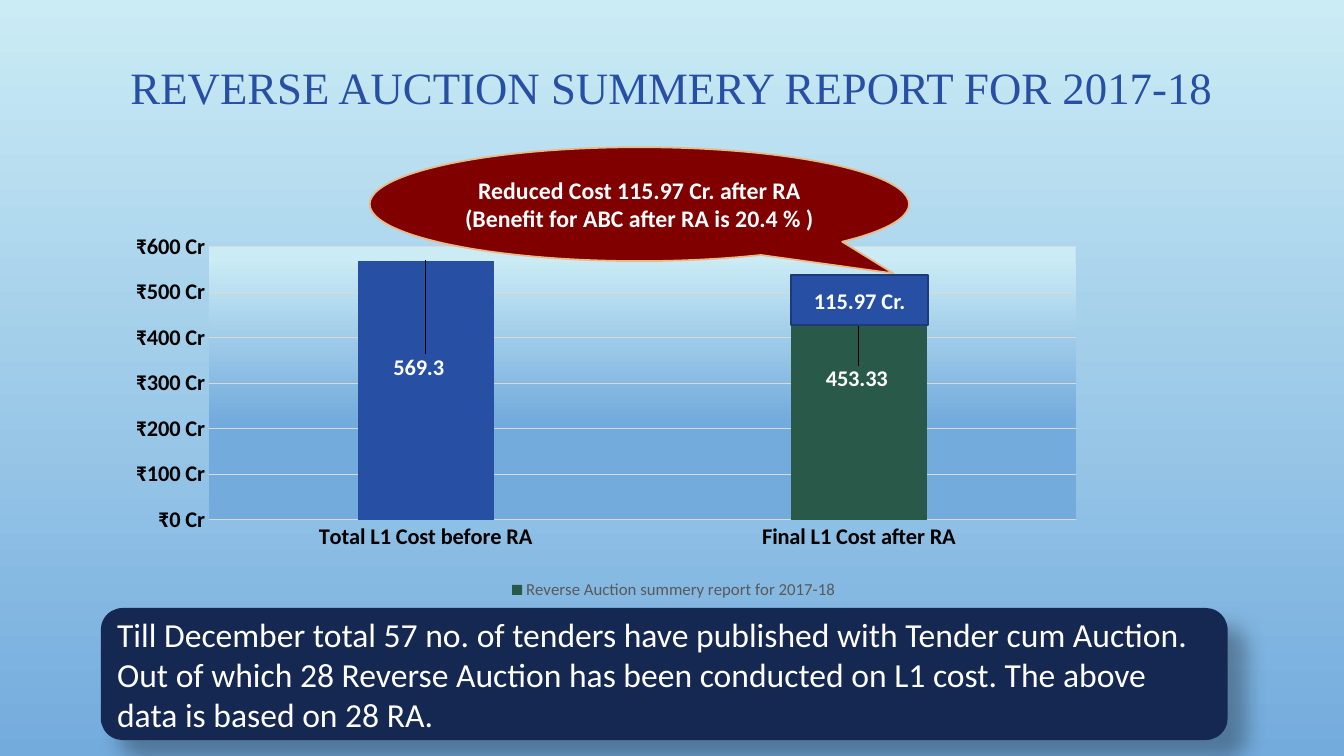
"""Build the reverse auction summary slide."""
from dataclasses import dataclass

import lxml.etree
import pptx
import pptx.chart.chart
import pptx.chart.data
import pptx.dml.color
import pptx.dml.fill
import pptx.enum.chart
import pptx.enum.shapes
import pptx.enum.text
import pptx.oxml
import pptx.oxml.ns
import pptx.slide
import pptx.text.text
import pptx.util
from pptx.util import Cm

COLORS = {
    "sky": "CBECF5", "horizon": "73ABDD", "blue": "274FA4", "blue_edge": "1D3A79",
    "green": "295948", "maroon": "800000", "sand": "E7BB88", "navy": "142852",
    "white": "FFFFFF", "black": "000000", "grid": "D9D9D9", "legend": "595959",
}
BODY_FONT = "Calibri"
SHAPES = pptx.enum.shapes.MSO_SHAPE
ALIGN = pptx.enum.text.PP_ALIGN
qn = pptx.oxml.ns.qn


@dataclass
class Box:
    """A filled shape with text; lengths in centimetres, sizes in points."""

    kind: SHAPES
    place: tuple[float, float, float, float]
    text: str
    size: float
    fill: str
    line: str | None = None
    bold: bool = True
    align: ALIGN = ALIGN.CENTER
    adjustments: tuple[float, ...] = ()
    shadow: bool = False


@dataclass
class Bar:
    """A column with its fill and the offset of its label."""

    category: str
    value: float
    color: str
    label_shift: tuple[float, float]


BARS = [
    Bar("Total L1 Cost before RA", 569.3, "blue", (-0.006, 0.33)),
    Bar("Final L1 Cost after RA", 453.33, "green", (-0.002, 0.22)),
]
BOXES = [
    Box(SHAPES.OVAL_CALLOUT, (9.32, 3.71, 13.59, 2.87),
        "Reduced Cost 115.97 Cr. after RA\n(Benefit for ABC after RA is 20.4 % )",
        17, "maroon", "sand", adjustments=(0.471, 0.608)),
    Box(SHAPES.RECTANGLE, (19.94, 6.93, 3.45, 1.27), "115.97 Cr.", 16, "blue", "blue_edge"),
    Box(SHAPES.ROUNDED_RECTANGLE, (2.54, 15.32, 28.4, 3.33),
        "Till December total 57 no. of tenders have published with Tender cum Auction. "
        "Out of which 28 Reverse Auction has been conducted on L1 cost. "
        "The above data is based on 28 RA.",
        24, "navy", bold=False, align=ALIGN.LEFT, shadow=True),
]


def rgb(name: str) -> pptx.dml.color.RGBColor:
    """Look up a named colour."""
    return pptx.dml.color.RGBColor.from_string(COLORS[name])


def style_font(font: pptx.text.text.Font, size: float, color: str,
               bold: bool = False, name: str = BODY_FONT) -> None:
    """Set face, size, weight and colour."""
    font.name, font.size, font.bold = name, pptx.util.Pt(size), bold
    font.color.rgb = rgb(color)


def fill_sky(fill: pptx.dml.fill.FillFormat, start: float, end: float) -> None:
    """Apply the vertical sky gradient between two positions."""
    fill.gradient()
    fill.gradient_angle = 270
    for stop, color, position in zip(fill.gradient_stops, ("sky", "horizon"), (start, end)):
        stop.color.rgb = rgb(color)
        stop.position = position


def add_title(slide: pptx.slide.Slide) -> None:
    """Place and format the title."""
    title = slide.shapes.title
    title.left, title.top, title.width, title.height = map(Cm, (2.54, 0.05, 28.78, 4.45))
    title.text_frame.text = "REVERSE AUCTION SUMMERY REPORT FOR 2017-18"
    title.text_frame.vertical_anchor = pptx.enum.text.MSO_ANCHOR.MIDDLE
    paragraph = title.text_frame.paragraphs[0]
    paragraph.alignment, paragraph.line_spacing = ALIGN.CENTER, 0.9
    style_font(paragraph.runs[0].font, 32, "blue", name="Times New Roman")


def add_box(slide: pptx.slide.Slide, box: Box) -> None:
    """Draw one filled shape with its text."""
    shape = slide.shapes.add_shape(box.kind, *map(Cm, box.place))
    shape.shadow.inherit = False
    for index, value in enumerate(box.adjustments):
        shape.adjustments[index] = value
    shape.fill.solid()
    shape.fill.fore_color.rgb = rgb(box.fill)
    if box.line:
        shape.line.color.rgb = rgb(box.line)
        shape.line.width = pptx.util.Pt(1.25)
    else:
        shape.line.fill.background()
    if box.shadow:
        effects = shape._element.spPr.find(qn("a:effectLst"))
        shadow = lxml.etree.SubElement(
            effects, qn("a:outerShdw"), blurRad=str(pptx.util.Pt(15)),
            dist=str(pptx.util.Pt(18)), dir="2700000", algn="tl", rotWithShape="0")
        color = lxml.etree.SubElement(shadow, qn("a:srgbClr"), val=COLORS["black"])
        lxml.etree.SubElement(color, qn("a:alpha"), val="30000")
    frame = shape.text_frame
    frame.word_wrap = True
    frame.vertical_anchor = pptx.enum.text.MSO_ANCHOR.MIDDLE
    frame.text = box.text
    for paragraph in frame.paragraphs:
        paragraph.alignment = box.align
        for run in paragraph.runs:
            style_font(run.font, box.size, "white", box.bold)


def manual_layout(**settings: object) -> lxml.etree._Element:
    """Make a chart layout element from its settings."""
    layout = pptx.oxml.parse_xml(f'<c:layout {pptx.oxml.ns.nsdecls("c")}/>')
    manual = lxml.etree.SubElement(layout, qn("c:manualLayout"))
    for name, value in settings.items():
        lxml.etree.SubElement(manual, qn(f"c:{name}"), val=str(value))
    return layout


def style_plot_area(chart: pptx.chart.chart.Chart) -> None:
    """Fix the inner plot rectangle and give it the sky gradient."""
    area = chart._chartSpace.chart.plotArea
    for layout in area.findall(qn("c:layout")):
        area.remove(layout)
    area.insert(0, manual_layout(layoutTarget="inner", xMode="edge", yMode="edge",
                                 x=0.093, y=0.053, w=0.759, h=0.724))
    properties = pptx.oxml.parse_xml(f'<c:spPr {pptx.oxml.ns.nsdecls("c", "a")}/>')
    area.append(properties)
    fill_sky(pptx.dml.fill.FillFormat.from_fill_parent(properties), 0.04, 0.64)


def style_axes(chart: pptx.chart.chart.Chart) -> None:
    """Format both axes and the gridlines."""
    category, value = chart.category_axis, chart.value_axis
    for axis in (category, value):
        axis.major_tick_mark = axis.minor_tick_mark = pptx.enum.chart.XL_TICK_MARK.NONE
        style_font(axis.tick_labels.font, 16, "black", True)
    value.minimum_scale, value.maximum_scale, value.major_unit = 0, 600, 100
    value.tick_labels.number_format = r"[$₹-439]#,##0\ \C\r."
    value.tick_labels.number_format_is_linked = False
    value.format.line.fill.background()
    for line in (category.format.line, value.major_gridlines.format.line):
        line.color.rgb = rgb("grid")
        line.width = pptx.util.Pt(0.75)


def add_cost_chart(slide: pptx.slide.Slide) -> None:
    """Draw the column chart of costs before and after the auction."""
    data = pptx.chart.data.CategoryChartData()
    data.categories = [bar.category for bar in BARS]
    data.add_series("Reverse Auction summery report for 2017-18", [bar.value for bar in BARS])
    chart = slide.shapes.add_chart(pptx.enum.chart.XL_CHART_TYPE.COLUMN_CLUSTERED,
                                   *map(Cm, (2.59, 5.72, 28.78, 9.5)), data).chart
    style_font(chart.font, 10, "black")
    chart.has_title = False
    chart.has_legend = True
    chart.legend.position = pptx.enum.chart.XL_LEGEND_POSITION.BOTTOM
    chart.legend.include_in_layout = False
    style_font(chart.legend.font, 12, "legend")
    style_plot_area(chart)
    style_axes(chart)
    plot = chart.plots[0]
    plot.vary_by_categories, plot.gap_width, plot.overlap = False, 219, -27
    series = plot.series[0]
    series.format.fill.solid()
    series.format.fill.fore_color.rgb = rgb("green")
    labels = series.data_labels
    labels.show_value = True
    style_font(labels.font, 16, "white", True)
    for index, bar in enumerate(BARS):
        point = series.points[index]
        point.format.fill.solid()
        point.format.fill.fore_color.rgb = rgb(bar.color)
        style_font(point.data_label.font, 16, "white", True)
        point.data_label.position = pptx.enum.chart.XL_LABEL_POSITION.OUTSIDE_END
        shift_x, shift_y = bar.label_shift
        label = labels._element.findall(qn("c:dLbl"))[index]
        label.insert(1, manual_layout(x=shift_x, y=shift_y))
    labels._element.append(pptx.oxml.parse_xml(
        f'<c:extLst {pptx.oxml.ns.nsdecls("c")}>'
        '<c:ext uri="{CE6537A1-D6FC-4f65-9D91-7224C49458BB}" '
        'xmlns:c15="http://schemas.microsoft.com/office/drawing/2012/chart">'
        '<c15:showLeaderLines val="1"/></c:ext></c:extLst>'))


def main() -> None:
    """Build and save the presentation."""
    presentation = pptx.Presentation()
    presentation.slide_width, presentation.slide_height = Cm(33.87), Cm(19.05)
    slide = presentation.slides.add_slide(presentation.slide_layouts[5])
    fill_sky(slide.background.fill, 0, 1)
    add_title(slide)
    add_cost_chart(slide)
    for box in BOXES:
        add_box(slide, box)
    presentation.save("out.pptx")


if __name__ == "__main__":
    main()
